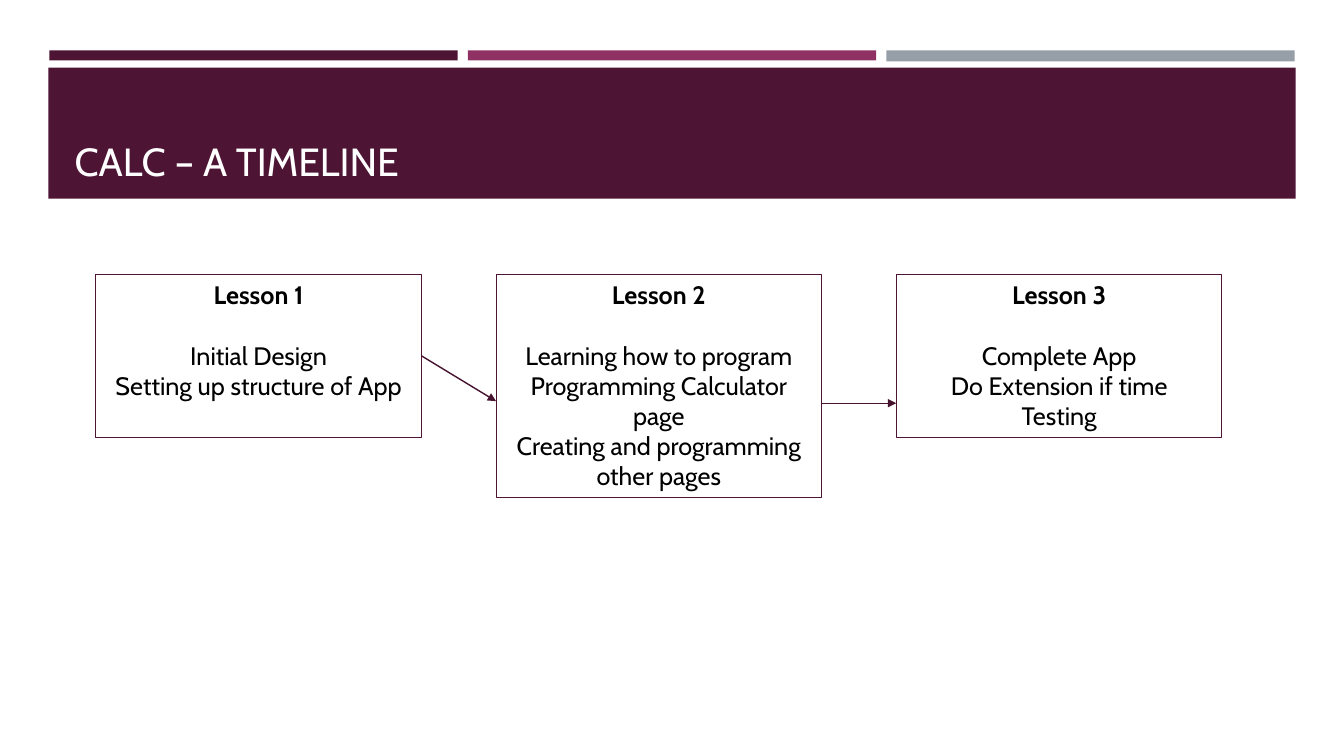
"""Build the lesson timeline slide."""
import pptx
import pptx.util
import pptx.dml.color
import pptx.enum.shapes
import pptx.enum.text
import pptx.oxml
import pptx.oxml.ns

Inches, Pt = pptx.util.Inches, pptx.util.Pt
Anchor, Align = pptx.enum.text.MSO_ANCHOR, pptx.enum.text.PP_ALIGN
Rect = pptx.enum.shapes.MSO_SHAPE.RECTANGLE


def color(code):
    return pptx.dml.color.RGBColor.from_string(code)


def write(para, text, size=18, tint="000000", bold=False, align=Align.CENTER, after=0):
    para.alignment = align
    para.line_spacing = 1.0
    para.space_before, para.space_after = Pt(0), Pt(after)
    run = para.add_run()
    run.text = text
    run.font.name, run.font.size, run.font.bold = "Cabin", Pt(size), bold
    run.font.color.rgb = color(tint)


deck = pptx.Presentation()
deck.slide_width, deck.slide_height = Inches(13.33), Inches(7.5)
slide = deck.slides.add_slide(deck.slide_layouts[5])
shapes = slide.shapes

bars = [
    (0.49, 0.5, 4.05, 0.1, "4D1434"),
    (4.64, 0.5, 4.05, 0.1, "903163"),
    (8.79, 0.5, 4.05, 0.11, "969FA7"),
    (0.48, 0.67, 12.37, 1.3, "4D1434"),
]
for left, top, width, height, tint in bars:
    bar = shapes.add_shape(Rect, Inches(left), Inches(top), Inches(width), Inches(height))
    bar.shadow.inherit = False
    bar.fill.solid()
    bar.fill.fore_color.rgb = color(tint)
    bar.line.fill.background()

title = shapes.title
title.left, title.top = Inches(0.64), Inches(0.77)
title.width, title.height = Inches(12.06), Inches(1.11)
title.text_frame.vertical_anchor = Anchor.BOTTOM
title.text_frame.word_wrap = True
write(title.text_frame.paragraphs[0], "CALC – A TIMELINE", size=28, tint="FFFFFF", align=Align.LEFT)
shapes._spTree.append(title._element)

start, step, wide = 0.95, 3.97, 3.23
lessons = [
    (1.62, ["Initial Design", "Setting up structure of App"]),
    (2.22, ["Learning how to program", "Programming Calculator page",
            "Creating and programming other pages"]),
    (1.62, ["Complete App", "Do Extension if time", "Testing"]),
]
for num, (height, tasks) in enumerate(lessons):
    box = shapes.add_shape(Rect, Inches(start + num * step), Inches(2.72), Inches(wide), Inches(height))
    box.shadow.inherit = False
    box.fill.background()
    box.line.color.rgb = color("4D1434")
    box.line.width = Pt(0.75)
    frame = box.text_frame
    frame.word_wrap = True
    frame.vertical_anchor = Anchor.TOP
    write(frame.paragraphs[0], f"Lesson {num + 1}", bold=True, after=21.75)
    for task in tasks:
        write(frame.add_paragraph(), task)

for num, (begin, end) in enumerate([(3.53, 3.98), (4, 4)]):
    left = start + num * step
    arrow = shapes.add_connector(
        pptx.enum.shapes.MSO_CONNECTOR.STRAIGHT,
        Inches(left + wide), Inches(begin), Inches(left + step), Inches(end))
    arrow.line.color.rgb = color("45122F")
    arrow.line.width = Pt(1)
    head = pptx.oxml.parse_xml(f'<a:tailEnd {pptx.oxml.ns.nsdecls("a")} type="triangle"/>')
    arrow.line._get_or_add_ln().append(head)
    flat = pptx.oxml.parse_xml(f'<a:effectLst {pptx.oxml.ns.nsdecls("a")}/>')
    arrow._element.spPr.append(flat)

deck.save("out.pptx")
